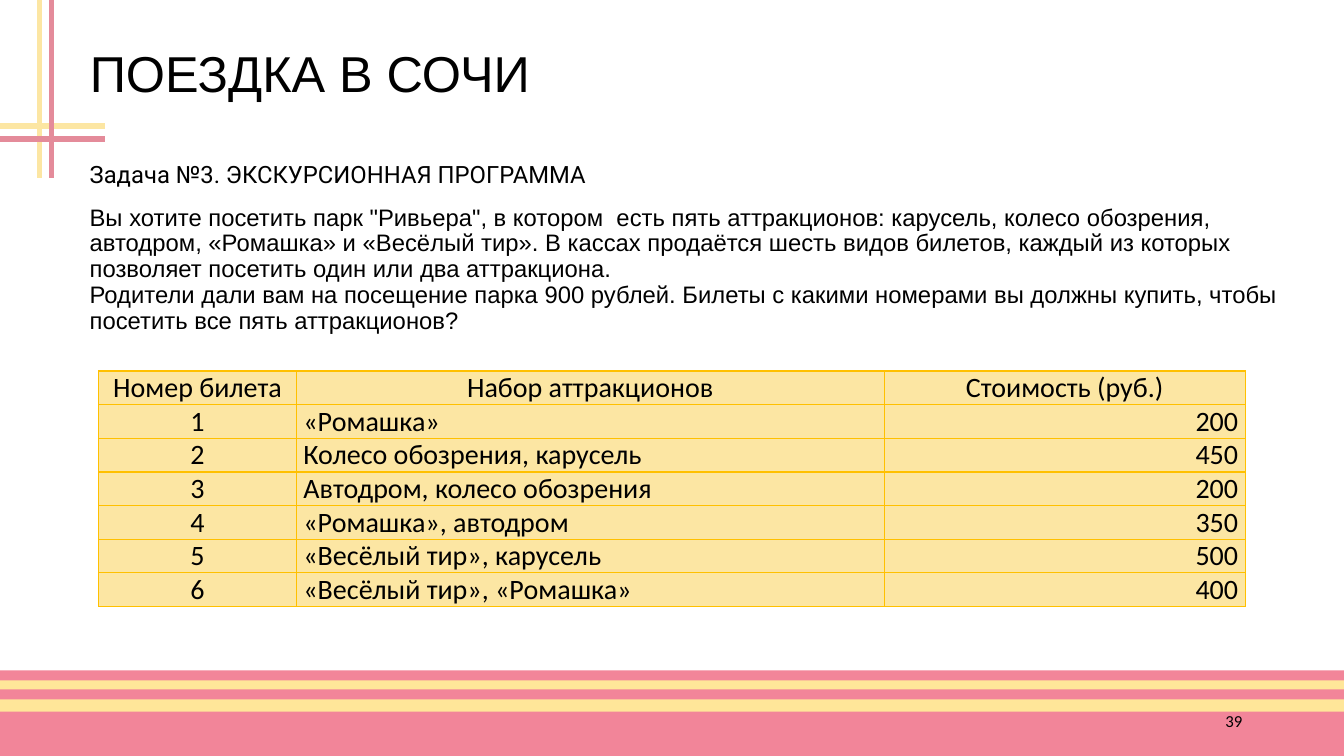
from dataclasses import dataclass
from lxml.etree import SubElement as Sub
from pptx import Presentation
from pptx.dml.color import RGBColor as Rgb
from pptx.enum.shapes import MSO_CONNECTOR as Link, MSO_SHAPE as Kind
from pptx.enum.text import MSO_ANCHOR as Anchor, MSO_AUTO_SIZE as Fit, PP_ALIGN as Align
from pptx.oxml.ns import qn
from pptx.util import Inches, Pt


@dataclass(frozen=True)
class Theme:
    ink: str = "000000"
    rose: str = "F28599"
    sand: str = "FFE699"
    dusk: str = "E48B9A"
    cream: str = "FCE6A3"
    gold: str = "FFC000"
    head: int = 36
    cell: int = 20
    body: int = 17
    foot: int = 12
    rule: int = 4


look = Theme()
deck = Presentation()
deck.slide_width, deck.slide_height = Inches(13.33), Inches(7.5)
slide = deck.slides.add_slide(deck.slide_layouts[5])
shapes = slide.shapes


def area(*parts):
    sides = (deck.slide_width, deck.slide_height) * 2
    return [round(side * part / 100) for side, part in zip(sides, parts)]


def style(para, size, font, align=Align.LEFT):
    para.alignment = align
    for run in para.runs:
        run.font.size, run.font.name = Pt(size), font
        run.font.color.rgb = Rgb.from_string(look.ink)


for top, high, tone in [
    (88.8, 11.2, look.sand),
    (94.13, 5.87, look.rose),
    (91.2, 1.33, look.rose),
    (88.67, 1.33, look.rose),
]:
    band = shapes.add_shape(Kind.RECTANGLE, *area(0, top, 100, high))
    band.shadow.inherit = False
    band.fill.solid()
    band.fill.fore_color.rgb = Rgb.from_string(tone)
    band.line.fill.background()

for ends, tone in [
    ((0, 16.67, 7.8, 16.67), look.cream),
    ((2.93, 0, 2.93, 23.6), look.cream),
    ((0, 18.4, 7.8, 18.4), look.dusk),
    ((3.83, 0, 3.83, 23.6), look.dusk),
]:
    rule = shapes.add_connector(Link.STRAIGHT, *area(*ends))
    rule.line.width = Pt(look.rule)
    rule.line.color.rgb = Rgb.from_string(tone)
    Sub(rule._element.spPr, qn("a:effectLst"))

title = shapes.title
title.left, title.top, title.width, title.height = area(5.93, 5.2, 87.25, 9.73)
frame = title.text_frame
frame.text = "ПОЕЗДКА В СОЧИ"
frame.vertical_anchor = Anchor.MIDDLE
frame.auto_size = Fit.NONE
frame.paragraphs[0].line_spacing = 0.9
style(frame.paragraphs[0], look.head, "Arial")

task = shapes.add_textbox(*area(5.93, 20.93, 91.07, 25.73)).text_frame
task.word_wrap = True
task.text = "\n".join([
    "Задача №3. ЭКСКУРСИОННАЯ ПРОГРАММА",
    'Вы хотите посетить парк "Ривьера", в котором  есть пять аттракционов: '
    "карусель, колесо обозрения, автодром, «Ромашка» и «Весёлый тир». "
    "В кассах продаётся шесть видов билетов, каждый из которых "
    "позволяет посетить один или два аттракциона.",
    "Родители дали вам на посещение парка 900 рублей. Билеты с какими "
    "номерами вы должны купить, чтобы посетить все пять аттракционов?",
])
for para, font in zip(task.paragraphs, ["Roboto", "Arial", "Arial"]):
    para.line_spacing = 0.9
    style(para, look.body, font)
task.paragraphs[0].space_after = Pt(12)

page = shapes.add_textbox(*area(70.67, 92.67, 22.5, 5.33)).text_frame
page.word_wrap = True
page.vertical_anchor = Anchor.MIDDLE
page.text = "39"
style(page.paragraphs[0], look.foot, "Calibri", Align.RIGHT)

rows = [
    ("Номер билета", "Набор аттракционов", "Стоимость (руб.)"),
    ("1", "«Ромашка»", "200"),
    ("2", "Колесо обозрения, карусель", "450"),
    ("3", "Автодром, колесо обозрения", "200"),
    ("4", "«Ромашка», автодром", "350"),
    ("5", "«Весёлый тир», карусель", "500"),
    ("6", "«Весёлый тир», «Ромашка»", "400"),
]
aligns = [Align.CENTER, Align.LEFT, Align.RIGHT]
grid = shapes.add_table(len(rows), 3, *area(7.35, 49.07, 85.3, 31.07)).table
grid.first_row = grid.horz_banding = False
for col, wide in zip(grid.columns, [14.7, 43.74, 26.86]):
    col.width = area(wide)[0]

for r, row in enumerate(rows):
    for c, text in enumerate(row):
        cell = grid.cell(r, c)
        cell.margin_left = cell.margin_right = Inches(0.07)
        cell.margin_top = cell.margin_bottom = 0
        cell.text_frame.text = text
        align = aligns[c] if r else Align.CENTER
        style(cell.text_frame.paragraphs[0], look.cell, "Calibri", align)
        props = cell._tc.get_or_add_tcPr()
        for side in "LRTB":
            edge = Sub(props, qn(f"a:ln{side}"), w=str(Pt(1)))
            fill = Sub(edge, qn("a:solidFill"))
            Sub(fill, qn("a:srgbClr"), val=look.gold)
        cell.fill.solid()
        cell.fill.fore_color.rgb = Rgb.from_string(look.cream)

deck.save("out.pptx")
